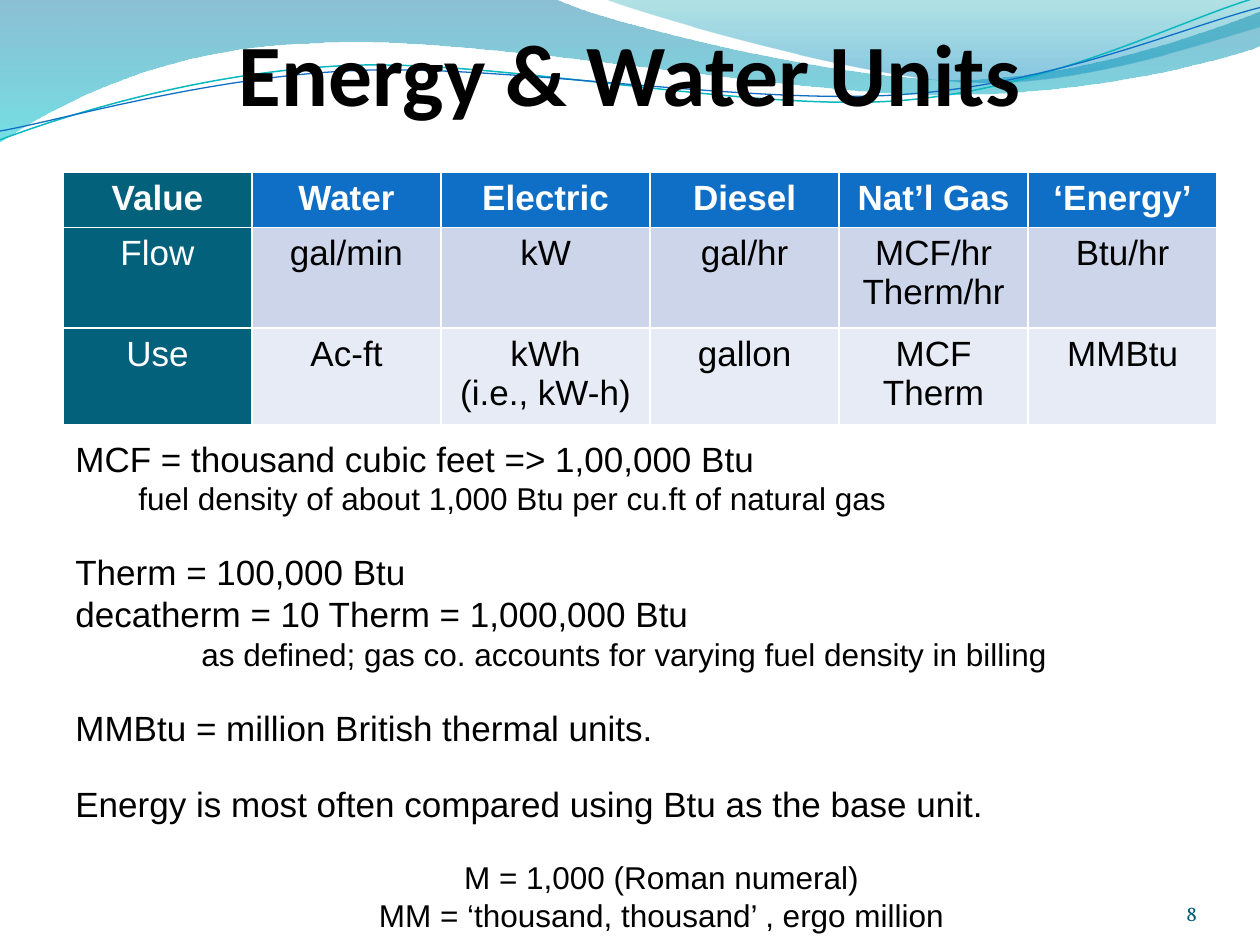
from dataclasses import dataclass
from typing import NamedTuple, Optional

from lxml import etree
from pptx import Presentation, util as u
from pptx.dml.color import RGBColor
from pptx.enum import text as t
from pptx.oxml import ns

WIDTH, HEIGHT = u.Inches(10), u.Inches(7.5)
CENTER, LEFT, RIGHT = t.PP_ALIGN.CENTER, t.PP_ALIGN.LEFT, t.PP_ALIGN.RIGHT


@dataclass(frozen=True)
class Theme:
    body: str = "Arial"
    heading: str = "Calibri"
    number: str = "Vollkorn"
    black: str = "000000"
    white: str = "FFFFFF"
    page: str = "045D75"
    row_head: str = "04617B"
    column_head: str = "0F6FC6"
    bands: tuple = ("CCD5EA", "E7EBF5")
    title_size: float = 50
    main_size: float = 20
    detail_size: float = 18
    page_size: float = 12


THEME = Theme()


class Stop(NamedTuple):
    position: float
    color: str
    opacity: int


class Wave(NamedTuple):
    """Points in inches; a step of 2 numbers is a line, one of 6 a curve."""
    start: tuple
    steps: list
    stops: tuple = ()
    line: Optional[tuple] = None


class Note(NamedTuple):
    words: str
    size: float = THEME.main_size
    indent: float = 0.5
    gap: float = 0
    align: t.PP_ALIGN = LEFT


BREAK = 19.4  # space above a new group of notes, in points

WAVES = [
    Wave((0, 0), [(4.4, -0.01), (4.76, 0.17, 6.64, 0.63, 7.58, 0.63),
                  (8.53, 0.63, 9.58, 0.26, 10, 0.09), (10.01, 0.36),
                  (9.83, 0.44, 8.7, 0.76, 7.46, 0.75),
                  (6.22, 0.75, 3.82, 0.28, 2.57, 0.34),
                  (1.29, 0.36, 0.46, 0.83, -0.01, 1.13), (0, 0)],
         stops=(Stop(0, "0074A1", 45), Stop(1, "00C6CF", 55))),
    Wave((4.79, -0.01), [(5.09, 0.11, 6.82, 0.62, 7.69, 0.65),
                         (8.56, 0.69, 9.61, 0.32, 10, 0.21), (10, 0), (4.79, -0.01)],
         stops=(Stop(0, "00A1A9", 30), Stop(0.8, "008BBF", 45))),
    Wave((0, 1.11), [(0.48, 0.93, 1.58, 0.57, 2.77, 0.52),
                     (3.95, 0.47, 5.93, 0.89, 7.13, 0.8),
                     (8.33, 0.71, 9.38, 0.15, 9.98, -0.02)],
         line=("0AB8BF", 0.85)),
    Wave((0, 1.04), [(0.47, 0.96, 1.64, 0.61, 2.83, 0.56),
                     (4.03, 0.51, 5.97, 0.84, 7.17, 0.75),
                     (8.36, 0.67, 9.41, 0.21, 10, 0.06)],
         line=("0F6FC6", 0.75)),
]

UNITS = [
    ["Value", "Water", "Electric", "Diesel", "Nat’l Gas", "‘Energy’"],
    ["Flow", "gal/min", "kW", "gal/hr", "MCF/hr\nTherm/hr", "Btu/hr"],
    ["Use", "Ac-ft", "kWh\n(i.e., kW-h)", "gallon", "MCF\nTherm", "MMBtu"],
]
COLUMN_WIDTHS = [1.5, 1.5, 1.66, 1.5, 1.5, 1.5]
ROW_HEIGHTS = [0.41, 0.8, 0.71]

NOTES = [
    Note("MCF = thousand cubic feet => 1,00,000 Btu"),
    Note("fuel density of about 1,000 Btu per cu.ft of natural gas", THEME.detail_size, 1),
    Note("Therm = 100,000 Btu", gap=BREAK),
    Note("decatherm = 10 Therm = 1,000,000 Btu"),
    Note("as defined; gas co. accounts for varying fuel density in billing",
         THEME.detail_size, 1.5),
    Note("MMBtu = million British thermal units.", gap=BREAK),
    Note("Energy is most often compared using Btu as the base unit.", gap=BREAK),
    Note("M = 1,000 (Roman numeral)", THEME.detail_size, gap=BREAK, align=CENTER),
    Note("MM = ‘thousand, thousand’ , ergo million", THEME.detail_size, align=CENTER),
]


def apply(target, values: dict) -> None:
    for key, value in values.items():
        setattr(target, key, value)


def format_font(font, name: str, size: float, color: str, bold: bool = False) -> None:
    apply(font, {"name": name, "size": u.Pt(size), "bold": bold})
    font.color.rgb = RGBColor.from_string(color)


def bend(ribbon, steps: list) -> None:
    """Join each three line segments of a curved step into one cubic curve."""
    segments = iter(list(ribbon._element.iter(ns.qn("a:lnTo"))))
    for step in steps:
        first, *others = [next(segments) for _ in range(len(step) // 2)]
        if others:
            first.tag = ns.qn("a:cubicBezTo")
        for other in others:
            first.append(other[0])
            other.getparent().remove(other)


def draw_wave(slide, wave: Wave) -> None:
    points = [(u.Inches(x), u.Inches(y)) for step in wave.steps
              for x, y in zip(step[::2], step[1::2])]
    builder = slide.shapes.build_freeform(*map(u.Inches, wave.start), scale=1.0)
    builder.add_line_segments(points, close=bool(wave.stops))
    ribbon = builder.convert_to_shape()
    bend(ribbon, wave.steps)
    ribbon.shadow.inherit = False
    if wave.line:
        color, weight = wave.line
        ribbon.fill.background()
        ribbon.line.color.rgb = RGBColor.from_string(color)
        ribbon.line.width = u.Pt(weight)
        return
    ribbon.line.fill.background()
    ribbon.fill.gradient()
    ribbon.fill.gradient_angle = 270
    for target, stop in zip(ribbon.fill.gradient_stops, wave.stops):
        target.position = stop.position
        target.color.rgb = RGBColor.from_string(stop.color)
    for node, stop in zip(ribbon.fill._xPr.iter(ns.qn("a:srgbClr")), wave.stops):
        etree.SubElement(node, ns.qn("a:alpha"), val=str(stop.opacity * 1000))


def add_frame(slide, left: float, top: float, width: float, height: float, **values):
    """Add a wrapping text box placed by shares of the slide's size."""
    box = slide.shapes.add_textbox(
        int(left * WIDTH), int(top * HEIGHT), int(width * WIDTH), int(height * HEIGHT))
    apply(box.text_frame, {"word_wrap": True, **values})
    return box.text_frame


def draw_label(frame, words: str, align: t.PP_ALIGN, *font) -> None:
    frame.text = words
    frame.paragraphs[0].alignment = align
    format_font(frame.paragraphs[0].runs[0].font, *font)


def draw_notes(slide, notes: list) -> None:
    frame = add_frame(slide, 0, 0.456, 1, 0.556)
    for i, note in enumerate(notes):
        line = frame.paragraphs[0] if i == 0 else frame.add_paragraph()
        apply(line, {"alignment": note.align, "space_before": u.Pt(note.gap)})
        line._p.get_or_add_pPr().set("marL", str(u.Inches(note.indent)))
        run = line.add_run()
        run.text = note.words
        format_font(run.font, THEME.body, note.size, THEME.black)


def draw_units(slide) -> None:
    table = slide.shapes.add_table(
        len(UNITS), len(COLUMN_WIDTHS), int(0.05 * WIDTH), u.Inches(1.37),
        u.Inches(sum(COLUMN_WIDTHS)), u.Inches(sum(ROW_HEIGHTS))).table
    table.first_col = True
    for column, width in zip(table.columns, COLUMN_WIDTHS):
        column.width = u.Inches(width)
    for row, height in zip(table.rows, ROW_HEIGHTS):
        row.height = u.Inches(height)
    for r, values in enumerate(UNITS):
        for c, value in enumerate(values):
            cell = table.cell(r, c)
            fill = (THEME.row_head if c == 0 else
                    THEME.column_head if r == 0 else THEME.bands[r - 1])
            cell.fill.solid()
            cell.fill.fore_color.rgb = RGBColor.from_string(fill)
            cell.text = value
            ink = THEME.white if 0 in (r, c) else THEME.black
            for line in cell.text_frame.paragraphs:
                line.alignment = CENTER
                format_font(line.runs[0].font, THEME.body, THEME.main_size, ink, r == 0)


def main() -> None:
    deck = Presentation()
    apply(deck, {"slide_width": WIDTH, "slide_height": HEIGHT})
    slide = deck.slides.add_slide(deck.slide_layouts[6])
    for wave in WAVES:
        draw_wave(slide, wave)
    flush = dict.fromkeys(["margin_left", "margin_right", "margin_bottom"], 0)
    title = add_frame(slide, 0, 0, 1, 0.144, margin_top=u.Inches(0.05),
                      vertical_anchor=t.MSO_ANCHOR.MIDDLE, **flush)
    draw_label(title, "Energy & Water Units", CENTER,
               THEME.heading, THEME.title_size, THEME.black, True)
    page = add_frame(slide, 0.867, 0.927, 0.083, 0.053, margin_top=0,
                     vertical_anchor=t.MSO_ANCHOR.BOTTOM, **flush)
    draw_label(page, "8", RIGHT, THEME.number, THEME.page_size, THEME.page)
    draw_units(slide)
    draw_notes(slide, NOTES)
    deck.save("out.pptx")


if __name__ == "__main__":
    main()
